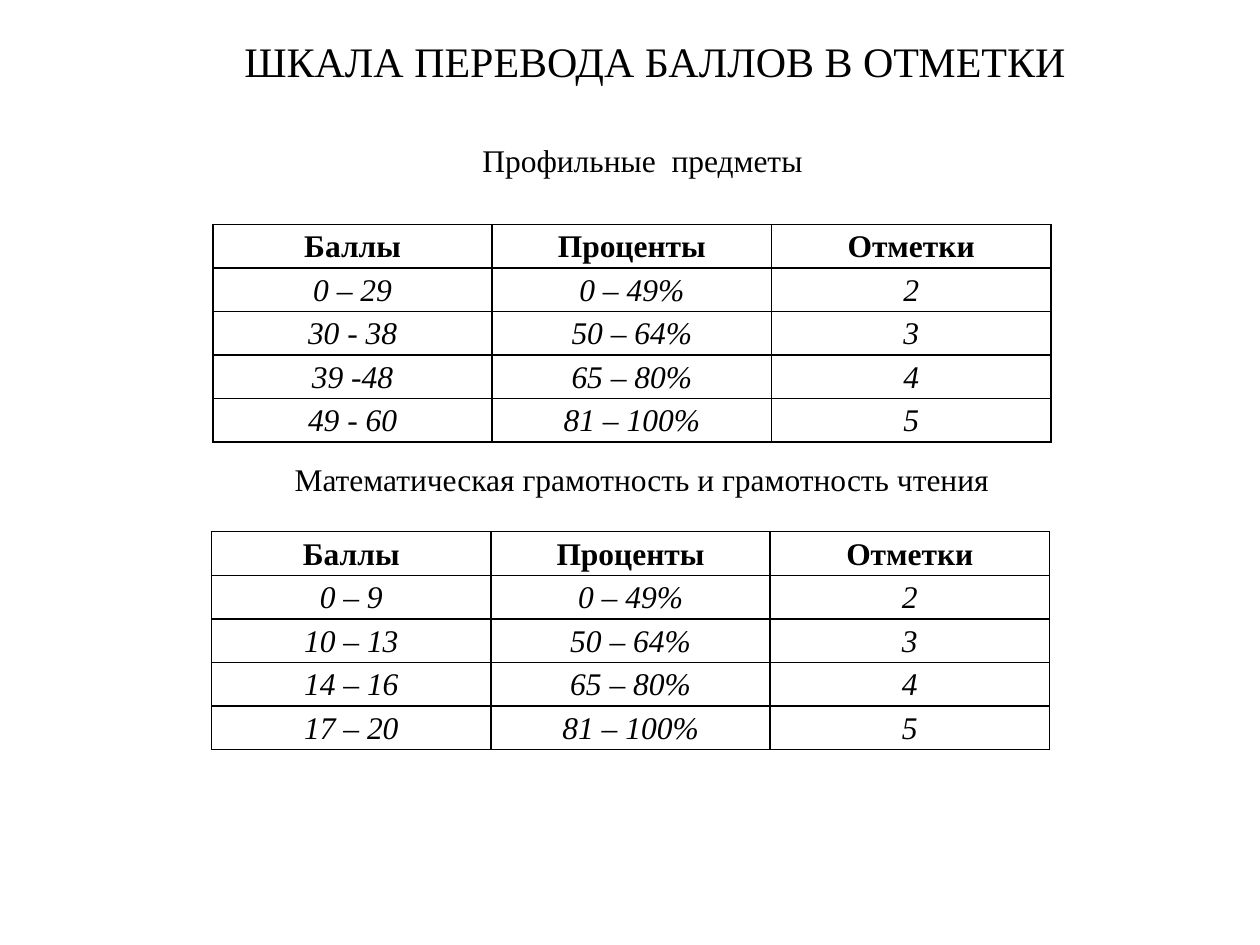
from dataclasses import dataclass

from lxml.etree import SubElement
from pptx import Presentation
from pptx.dml.color import RGBColor
from pptx.enum.text import MSO_ANCHOR, MSO_AUTO_SIZE, PP_ALIGN
from pptx.oxml.ns import qn
from pptx.util import Inches, Pt


@dataclass(frozen=True)
class Theme:
    font: str = "Times New Roman"
    ink: str = "000000"
    title: int = 24
    body: int = 18
    border: int = 1


THEME = Theme()

HEADER = ("Баллы", "Проценты", "Отметки")
PERCENTS = ("0 – 49%", "50 – 64%", "65 – 80%", "81 – 100%")
MARKS = ("2", "3", "4", "5")
PROFILE_SCORES = ("0 – 29", "30 - 38", "39 -48", "49 - 60")
LITERACY_SCORES = ("0 – 9", "10 – 13", "14 – 16", "17 – 20")


def add_run(p, text, size, bold=False, italic=False):
    r = p.add_run()
    r.text = text
    r.font.name = THEME.font
    r.font.size = Pt(size)
    r.font.bold = bold
    r.font.italic = italic
    r.font.color.rgb = RGBColor.from_string(THEME.ink)


def add_heading(s, box, text, size, wrap=False):
    sp = s.shapes.add_textbox(*map(Inches, box))
    tf = sp.text_frame
    tf.word_wrap = wrap
    tf.auto_size = MSO_AUTO_SIZE.SHAPE_TO_FIT_TEXT
    p = tf.paragraphs[0]
    p.alignment = PP_ALIGN.CENTER if wrap else PP_ALIGN.LEFT
    add_run(p, text, size)


def add_borders(cell):
    tc_pr = cell._tc.get_or_add_tcPr()
    for side in ("lnL", "lnR", "lnT", "lnB"):
        ln = SubElement(tc_pr, qn(f"a:{side}"), w=str(Pt(THEME.border)))
        fill = SubElement(ln, qn("a:solidFill"))
        SubElement(fill, qn("a:srgbClr"), val=THEME.ink)


def fill_cell(cell, text, is_header):
    cell.margin_left = cell.margin_right = Inches(0.07)
    cell.margin_top = cell.margin_bottom = 0
    cell.vertical_anchor = MSO_ANCHOR.TOP
    add_borders(cell)
    cell.fill.background()
    p = cell.text_frame.paragraphs[0]
    p.alignment = PP_ALIGN.CENTER
    p.line_spacing = 1.15
    add_run(p, text, THEME.body, bold=is_header, italic=not is_header)


def add_scale_table(s, box, scores):
    rows = [HEADER, *zip(scores, PERCENTS, MARKS)]
    # The box is shared equally between rows and columns
    table = s.shapes.add_table(len(rows), len(HEADER), *map(Inches, box)).table
    table.first_row = table.horz_banding = False
    for i, row in enumerate(rows):
        for j, text in enumerate(row):
            fill_cell(table.cell(i, j), text, is_header=i == 0)


def main():
    prs = Presentation()
    prs.slide_width, prs.slide_height = Inches(10), Inches(7.5)
    s = prs.slides.add_slide(prs.slide_layouts[6])

    # Title
    add_heading(s, (1.84, 0.23, 6.79, 0.5),
                "ШКАЛА ПЕРЕВОДА БАЛЛОВ В ОТМЕТКИ", THEME.title)

    # Profile subjects
    add_heading(s, (3.73, 1.07, 3, 0.4), "Профильные  предметы", THEME.body)
    add_scale_table(s, (1.69, 1.78, 6.65, 1.73), PROFILE_SCORES)

    # Mathematical and reading literacy
    add_heading(s, (1.82, 3.6, 6.55, 0.4),
                "Математическая грамотность и грамотность чтения",
                THEME.body, wrap=True)
    add_scale_table(s, (1.68, 4.22, 6.65, 1.73), LITERACY_SCORES)

    prs.save("out.pptx")


if __name__ == "__main__":
    main()
